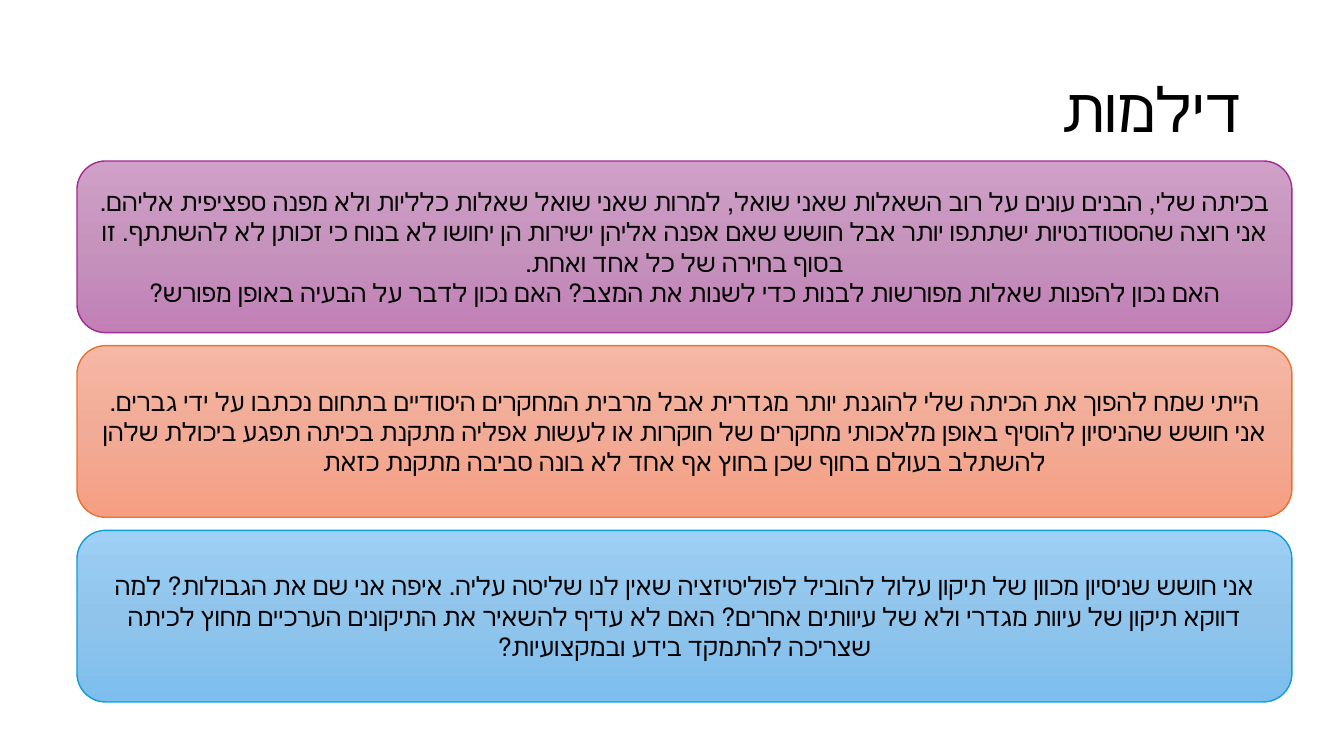
from copy import deepcopy

from pptx import Presentation
from pptx import util as u
from pptx.dml.color import RGBColor
from pptx.enum import lang, shapes, text
from pptx.oxml.ns import qn

# Content
HEADING = "דילמות"
DILEMMAS = [
    ("participation", [
        "בכיתה שלי, הבנים עונים על רוב השאלות שאני שואל, למרות שאני שואל שאלות כלליות ולא מפנה "
        "ספציפית אליהם. אני רוצה שהסטודנטיות ישתתפו יותר אבל חושש שאם אפנה אליהן ישירות הן יחושו "
        "לא בנוח כי זכותן לא להשתתף. זו בסוף בחירה של כל אחד ואחת.",
        "האם נכון להפנות שאלות מפורשות לבנות כדי לשנות את המצב? האם נכון לדבר על הבעיה באופן מפורש?",
    ]),
    ("research", [
        "הייתי שמח להפוך את הכיתה שלי להוגנת יותר מגדרית אבל מרבית המחקרים היסודיים בתחום נכתבו "
        "על ידי גברים. אני חושש שהניסיון להוסיף באופן מלאכותי מחקרים של חוקרות או לעשות אפליה "
        "מתקנת בכיתה תפגע ביכולת שלהן להשתלב בעולם בחוף שכן בחוץ אף אחד לא בונה סביבה מתקנת כזאת",
    ]),
    ("politics", [
        "אני חושש שניסיון מכוון של תיקון עלול להוביל לפוליטיזציה שאין לנו שליטה עליה. איפה אני שם "
        "את הגבולות? למה דווקא תיקון של עיוות מגדרי ולא של עיוותים אחרים? האם לא עדיף להשאיר את "
        "התיקונים הערכיים מחוץ לכיתה שצריכה להתמקד בידע ובמקצועיות?",
    ]),
]

THEME = {
    "ink": "000000",
    "heading": ("Karla", 44),
    "body": ("Cabin", 18),
    "border": 1,
    # gradient from top to bottom, then the border colour
    "participation": (("D0A0C8", "C693BD", "C17FB6"), "A02B93"),
    "research": (("F5B8A5", "F2AB96", "F59E82"), "E97132"),
    "politics": (("9ECFF5", "90C4EB", "7CBEED"), "0F9ED5"),
}

# Layout in px
PX = 12192000 / 1344
SLIDE = (1344, 756)
HEADING_BOX = (93, 40, 1159, 146)
CARDS_LEFT, CARDS_TOP, CARDS_WIDTH, CARDS_HEIGHT = 77, 161, 1215, 541
GAP = 13


def px(*lengths):
    return [u.Emu(round(length * PX)) for length in lengths]


def write(frame, lines, style, align, spacing=None):
    """Fill a frame with right-to-left paragraphs."""
    font_name, size = THEME[style]
    frame.word_wrap = True
    frame.vertical_anchor = text.MSO_ANCHOR.MIDDLE
    for index, line in enumerate(lines):
        paragraph = frame.add_paragraph() if index else frame.paragraphs[0]
        paragraph.alignment = align
        if spacing:
            paragraph.line_spacing = spacing
        paragraph._p.get_or_add_pPr().set("rtl", "1")
        run = paragraph.add_run()
        run.text = line
        run.font.name = font_name
        run.font.size = u.Pt(size)
        run.font.color.rgb = RGBColor.from_string(THEME["ink"])
        run.font.language_id = lang.MSO_LANGUAGE_ID.HEBREW


def paint(card, colours, border):
    """Give a card its vertical gradient and border."""
    card.shadow.inherit = False
    card.fill.gradient()
    card.fill.gradient_angle = 270
    stop_list = card.fill._fill._gradFill.find(qn("a:gsLst"))
    stop_list.insert(1, deepcopy(stop_list[0]))
    for index, (stop, colour) in enumerate(zip(card.fill.gradient_stops, colours)):
        stop.position = index / (len(colours) - 1)
        stop.color.rgb = RGBColor.from_string(colour)
    card.line.color.rgb = RGBColor.from_string(border)
    card.line.width = u.Pt(THEME["border"])


def main():
    deck = Presentation()
    deck.slide_width, deck.slide_height = px(*SLIDE)
    slide = deck.slides.add_slide(deck.slide_layouts[6])

    # Heading
    heading = slide.shapes.add_textbox(*px(*HEADING_BOX))
    write(heading.text_frame, [HEADING], "heading", text.PP_ALIGN.RIGHT, 0.9)

    # Stacked dilemma cards
    card_height = (CARDS_HEIGHT - GAP * (len(DILEMMAS) - 1)) / len(DILEMMAS)
    for row, (topic, lines) in enumerate(DILEMMAS):
        top = CARDS_TOP + row * (card_height + GAP)
        card = slide.shapes.add_shape(
            shapes.MSO_SHAPE.ROUNDED_RECTANGLE,
            *px(CARDS_LEFT, top, CARDS_WIDTH, card_height))
        paint(card, *THEME[topic])
        write(card.text_frame, lines, "body", text.PP_ALIGN.CENTER)

    deck.save("out.pptx")


if __name__ == "__main__":
    main()
